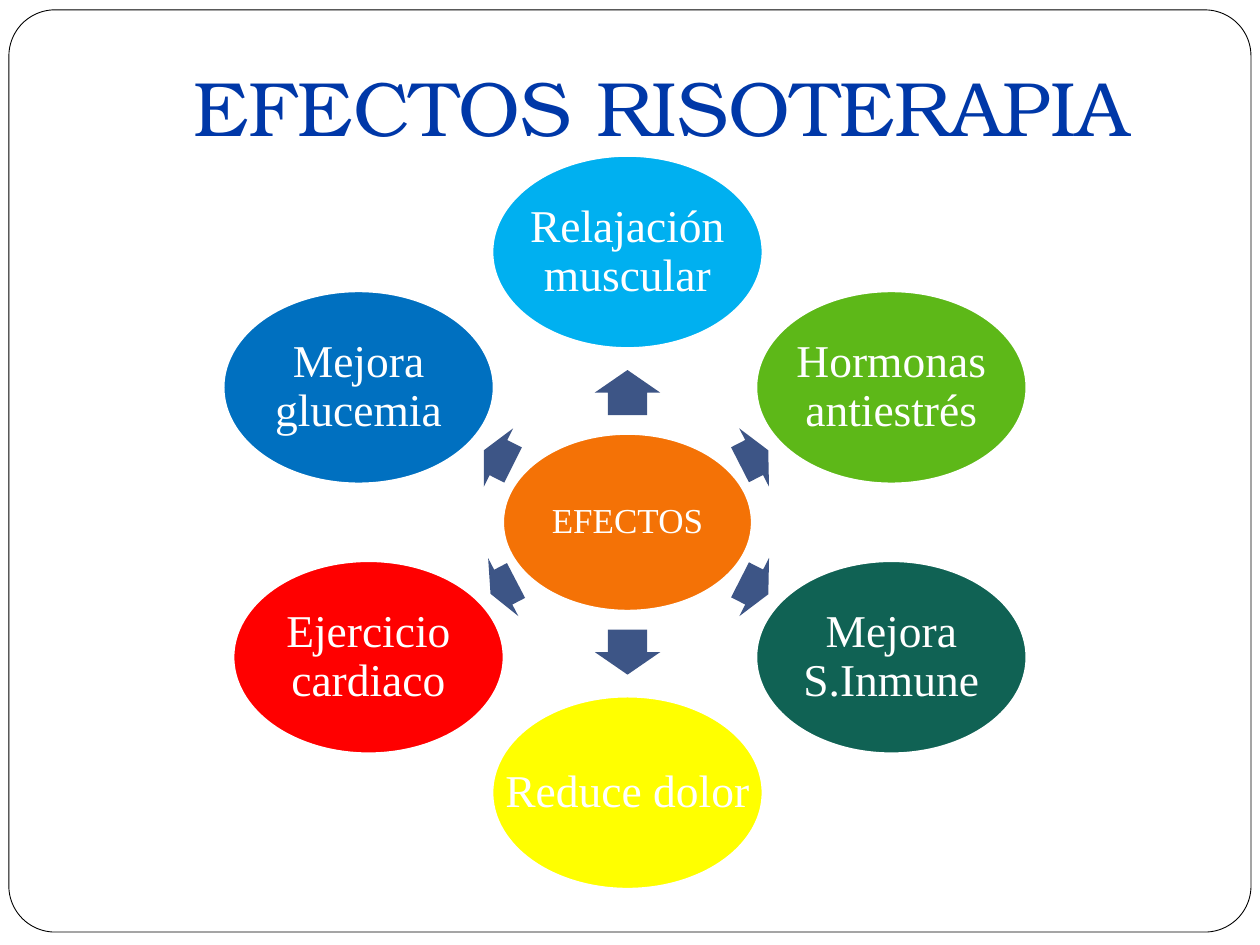
import math

import pptx
import pptx.dml.color
import pptx.enum.shapes
import pptx.enum.text
import pptx.oxml
import pptx.oxml.ns
import pptx.util

Cm = pptx.util.Cm
Pt = pptx.util.Pt
SHAPES = pptx.enum.shapes.MSO_SHAPE
ANCHORS = pptx.enum.text.MSO_ANCHOR

# Content
TITLE = "EFECTOS RISOTERAPIA"
HUB = "EFECTOS"
# Label, colour, offset from the hub centre (cm), arrow length (cm)
EFFECTS = [
    ("Relajación muscular", "sky", 0, -5.45, 0.91),
    ("Hormonas antiestrés", "green", 5.32, -2.72, 0.64),
    ("Mejora S.Inmune", "teal", 5.32, 2.72, 0.64),
    ("Reduce dolor", "yellow", 0, 5.45, 0.91),
    ("Ejercicio cardiaco", "red", -5.22, 2.72, 0.58),
    ("Mejora glucemia", "blue", -5.42, -2.72, 0.66),
]
COLORS = {
    "white": "FFFFFF", "black": "000000", "title": "0038A8",
    "orange": "F47206", "navy": "002060", "sky": "00B0F0",
    "green": "5DB818", "teal": "106254", "yellow": "FFFF00",
    "red": "FF0000", "blue": "0070C0",
}
TITLE_FONT = "TeX Gyre Bonum"
BODY_FONT = "Times New Roman"

# Layout in cm
CENTER_X, CENTER_Y = 12.65, 10.53
HUB_SIZE = (5.03, 3.58)
EFFECT_SIZE = (5.46, 3.89)
ARROW_WIDTH = 1.32
ARROW_POSITION = 0.48  # share of the way from hub to effect
ARROW_OPACITY = 76

presentation = pptx.Presentation()
presentation.slide_width, presentation.slide_height = Cm(25.4), Cm(19.05)
slide = presentation.slides.add_slide(presentation.slide_layouts[6])


def rgb(name):
    return pptx.dml.color.RGBColor.from_string(COLORS[name])


def centered_box(x, y, width, height):
    return Cm(x - width / 2), Cm(y - height / 2), Cm(width), Cm(height)


def add_shape(kind, box, fill, line=None, line_width=1.5):
    shape = slide.shapes.add_shape(kind, *box)
    shape.shadow.inherit = False
    shape.fill.solid()
    shape.fill.fore_color.rgb = rgb(fill)
    if line:
        shape.line.color.rgb = rgb(line)
        shape.line.width = Pt(line_width)
    else:
        shape.line.fill.background()
    return shape


def add_text(text, box, font, size, color, anchor, margins):
    frame = slide.shapes.add_textbox(*box).text_frame
    frame.word_wrap = True
    frame.vertical_anchor = anchor
    (frame.margin_left, frame.margin_top,
     frame.margin_right, frame.margin_bottom) = map(Cm, margins)
    paragraph = frame.paragraphs[0]
    paragraph.text = text
    paragraph.alignment = pptx.enum.text.PP_ALIGN.CENTER
    paragraph.font.name = font
    paragraph.font.size = Pt(size)
    paragraph.font.color.rgb = rgb(color)
    return paragraph


def add_bubble(text, x, y, bubble_size, fill, font_size):
    box = centered_box(x, y, *bubble_size)
    add_shape(SHAPES.OVAL, box, fill, "white")
    # The label spans the full bubble, wider than an oval's own text area
    paragraph = add_text(text, box, BODY_FONT, font_size, "white",
                         ANCHORS.MIDDLE, (0.1,) * 4)
    paragraph.line_spacing = 0.9


def add_arrow(dx, dy, length):
    box = centered_box(CENTER_X + dx * ARROW_POSITION,
                       CENTER_Y + dy * ARROW_POSITION, length, ARROW_WIDTH)
    arrow = add_shape(SHAPES.RIGHT_ARROW, box, "navy")
    arrow.adjustments[0], arrow.adjustments[1] = 0.6, 0.5
    arrow.rotation = math.degrees(math.atan2(dy, dx)) % 360
    color = arrow.fill._xPr.find(".//" + pptx.oxml.ns.qn("a:srgbClr"))
    alpha = pptx.oxml.parse_xml(
        f'<a:alpha {pptx.oxml.ns.nsdecls("a")} val="{ARROW_OPACITY * 1000}"/>')
    color.append(alpha)


# Frame
frame_box = (Cm(0.18), Cm(0.2), Cm(25.04), Cm(18.59))
border = add_shape(SHAPES.ROUNDED_RECTANGLE, frame_box, "white", "black", 0.5)
border.adjustments[0] = 0.05

# Title
add_text(TITLE, (Cm(2.54), Cm(0.13), Cm(21.59), Cm(3.18)), TITLE_FONT, 44,
         "title", ANCHORS.BOTTOM, (0.25, 0.13, 0.25, 0.25))

# Hub, arrows and effects
add_bubble(HUB, CENTER_X, CENTER_Y, HUB_SIZE, "orange", 20)
for label, color_name, dx, dy, arrow_length in EFFECTS:
    add_arrow(dx, dy, arrow_length)
    add_bubble(label, CENTER_X + dx, CENTER_Y + dy, EFFECT_SIZE, color_name, 26)

presentation.save("out.pptx")
